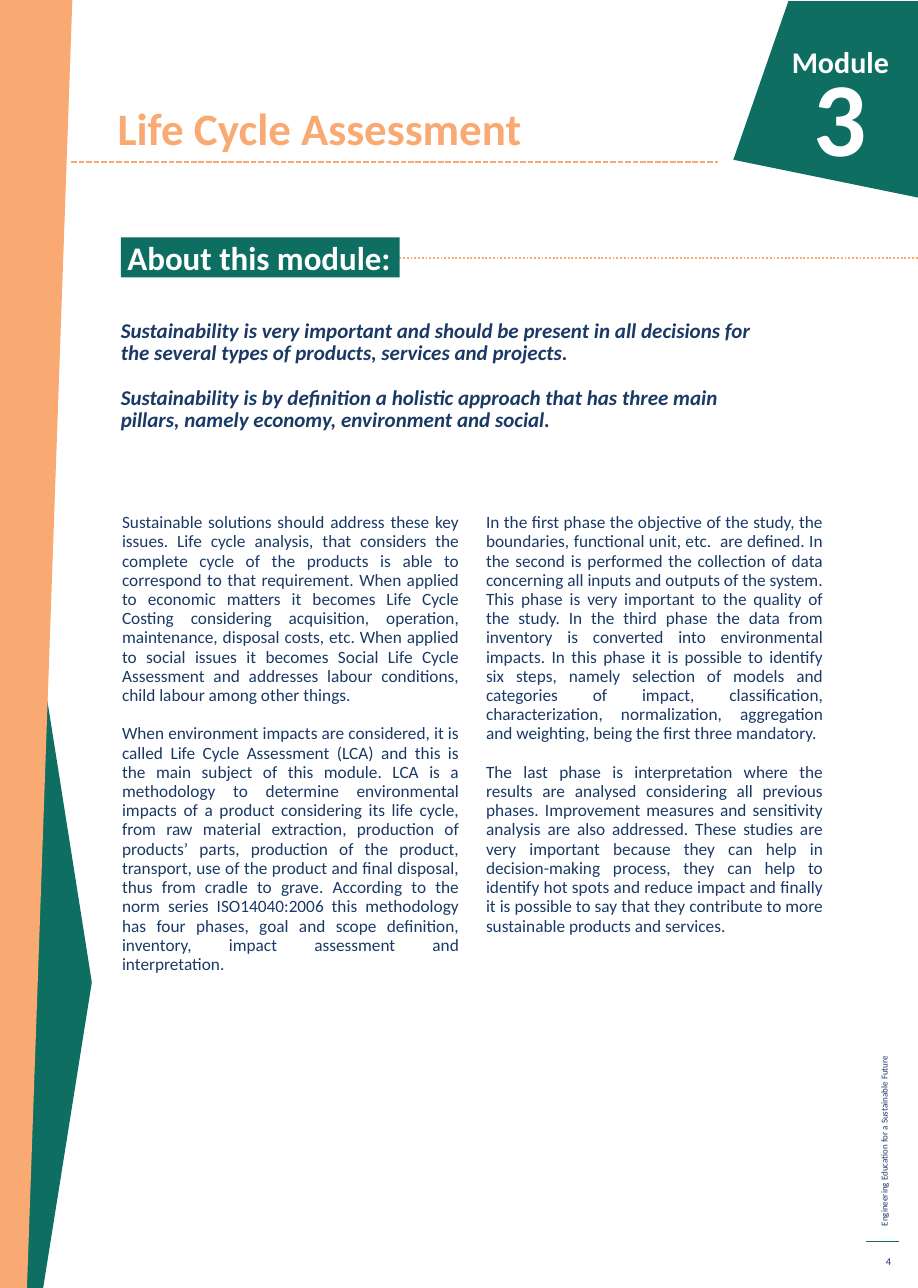
from lxml.etree import SubElement
from pptx import Presentation
from pptx.dml.color import RGBColor
from pptx.enum.dml import MSO_LINE as Dash
from pptx.enum.shapes import MSO_CONNECTOR as Connector
from pptx.enum.text import MSO_ANCHOR as Anchor, MSO_AUTO_SIZE as AutoSize, PP_ALIGN as Align
from pptx.oxml.ns import qn
from pptx.util import Inches, Pt

GREEN, ORANGE, NAVY, WHITE = "0E6E61", "F9AA73", "1A3966", "FFFFFF"


def paint(target, color):
    target.solid()
    target.fore_color.rgb = RGBColor.from_string(color)


def write(box, place, texts, size, color, bold=False, align=Align.LEFT, anchor=Anchor.TOP, leading=1.0):
    box.left, box.top, box.width, box.height = [Inches(length) for length in place]
    frame = box.text_frame
    frame.word_wrap = True
    frame.auto_size = AutoSize.NONE
    frame.vertical_anchor = anchor
    frame.text = "\n".join(texts)
    for para in frame.paragraphs:
        para.alignment = align
        para.line_spacing = leading
        para.space_before = Pt(0)
        para.font.name = "Calibri"
        para.font.size = Pt(size)
        para.font.bold = bold
        paint(para.font.fill, color)
    return frame


deck = Presentation()
deck.slide_width, deck.slide_height = Inches(8.5), Inches(11.93)
page = deck.slides.add_slide(deck.slide_layouts[1])
shapes = page.shapes
title, body = page.placeholders

outlines = [
    (GREEN, [(0.4, 11.93), (0.23, 11.93), (0.23, 5.17), (0.83, 8.97), (0.85, 9.1)]),
    (ORANGE, [(0, 0), (0.67, 0), (0.25, 11.93), (0, 11.93)]),
    (GREEN, [(8.5, 0.01), (7.3, 0.01), (6.79, 1.48), (8.5, 1.83)]),
]
for color, corners in outlines:
    points = [(Inches(x), Inches(y)) for x, y in corners]
    builder = shapes.build_freeform(*points[0])
    builder.add_line_segments(points[1:], close=True)
    panel = builder.convert_to_shape()
    panel.shadow.inherit = False
    paint(panel.fill, color)
    panel.line.fill.background()

rules = [
    (0.66, 6.65, 1.5, ORANGE, 1.25, Dash.SQUARE_DOT),
    (2.52, 8.5, 2.39, ORANGE, 1.25, Dash.ROUND_DOT),
    (8.02, 8.32, 11.5, GREEN, 0.75, Dash.SOLID),
]
for start, end, height, color, weight, dash in rules:
    rule = shapes.add_connector(Connector.STRAIGHT, Inches(start), Inches(height), Inches(end), Inches(height))
    paint(rule.line.fill, color)
    rule.line.width = Pt(weight)
    rule.line.dash_style = dash
    SubElement(rule._element.spPr, qn("a:effectLst"))

running_title, page_number, module_label, module_number, heading, intro = [
    shapes.add_textbox(0, 0, 0, 0) for _ in range(6)
]

write(title, (0.99, 0.38, 4.5, 1.1), ["Life Cycle Assessment"], 30, ORANGE, True,
      anchor=Anchor.BOTTOM, leading=Pt(26.8))
write(module_label, (6.53, 0.35, 1.8, 0.45), ["Module"], 20, WHITE, True, Align.RIGHT)
write(module_number, (6.32, 0.43, 1.8, 1.42), ["3"], 70, WHITE, True, Align.RIGHT)
write(page_number, (8.02, 11.54, 0.33, 0.29), ["4"], 7, NAVY, align=Align.RIGHT, anchor=Anchor.MIDDLE)
write(running_title, (5.94, 9.11, 4.49, 0.2), ["Engineering Education for a Sustainable Future"], 6, NAVY)
running_title.rotation = 270

heading_frame = write(heading, (1.12, 2.2, 2.58, 0.37), ["About this module:"], 22, WHITE, True,
                      anchor=Anchor.MIDDLE)
heading_frame.margin_left, heading_frame.margin_right = Inches(0.06), Inches(0)
heading_frame.margin_top = heading_frame.margin_bottom = Inches(0)
paint(heading.fill, GREEN)

intro_texts = [
    "Sustainability is very important and should be present in all decisions for the several types of products, services and projects.",
    "Sustainability is by definition a holistic approach that has three main pillars, namely economy, environment and social.",
]
intro_frame = write(intro, (1.02, 2.92, 6.21, 1.15), intro_texts, 14, NAVY, True, leading=Pt(14.8))
for para in intro_frame.paragraphs:
    para.font.italic = True
intro_frame.paragraphs[1].space_before = Pt(14.8)

body_texts = [
    "Sustainable solutions should address these key issues. Life cycle analysis, that considers the complete cycle of the products is able to correspond to that requirement. When applied to economic matters it becomes Life Cycle Costing considering acquisition, operation, maintenance, disposal costs, etc. When applied to social issues it becomes Social Life Cycle Assessment and addresses labour conditions, child labour among other things.",
    "When environment impacts are considered, it is called Life Cycle Assessment (LCA) and this is the main subject of this module. LCA is a methodology to determine environmental impacts of a product considering its life cycle, from raw material extraction, production of products’ parts, production of the product, transport, use of the product and final disposal, thus from cradle to grave. According to the norm series ISO14040:2006 this methodology has four phases, goal and scope definition, inventory, impact assessment and interpretation.",
    "In the first phase the objective of the study, the boundaries, functional unit, etc.  are defined. In the second is performed the collection of data concerning all inputs and outputs of the system. This phase is very important to the quality of the study. In the third phase the data from inventory is converted into environmental impacts. In this phase it is possible to identify six steps, namely selection of models and categories of impact, classification, characterization, normalization, aggregation and weighting, being the first three mandatory.",
    "The last phase is interpretation where the results are analysed considering all previous phases. Improvement measures and sensitivity analysis are also addressed. These studies are very important because they can help in decision-making process, they can help to identify hot spots and reduce impact and finally it is possible to say that they contribute to more sustainable products and services.",
]
body_frame = write(body, (1.02, 4.7, 6.7, 4.45), body_texts, 11.5, NAVY, align=Align.JUSTIFY, leading=Pt(12.8))
columns = body_frame._txBody.bodyPr
columns.set("numCol", "2")
columns.set("spcCol", str(Inches(0.24)))
for para in body_frame.paragraphs:
    properties = para._p.get_or_add_pPr()
    properties.set("marL", str(Inches(0.01)))
    properties.set("indent", "0")
    SubElement(properties, qn("a:buNone"))
    properties.append(properties.find(qn("a:defRPr")))
for para in body_frame.paragraphs[1::2]:
    para.space_before = Pt(12.8)

deck.save("out.pptx")
